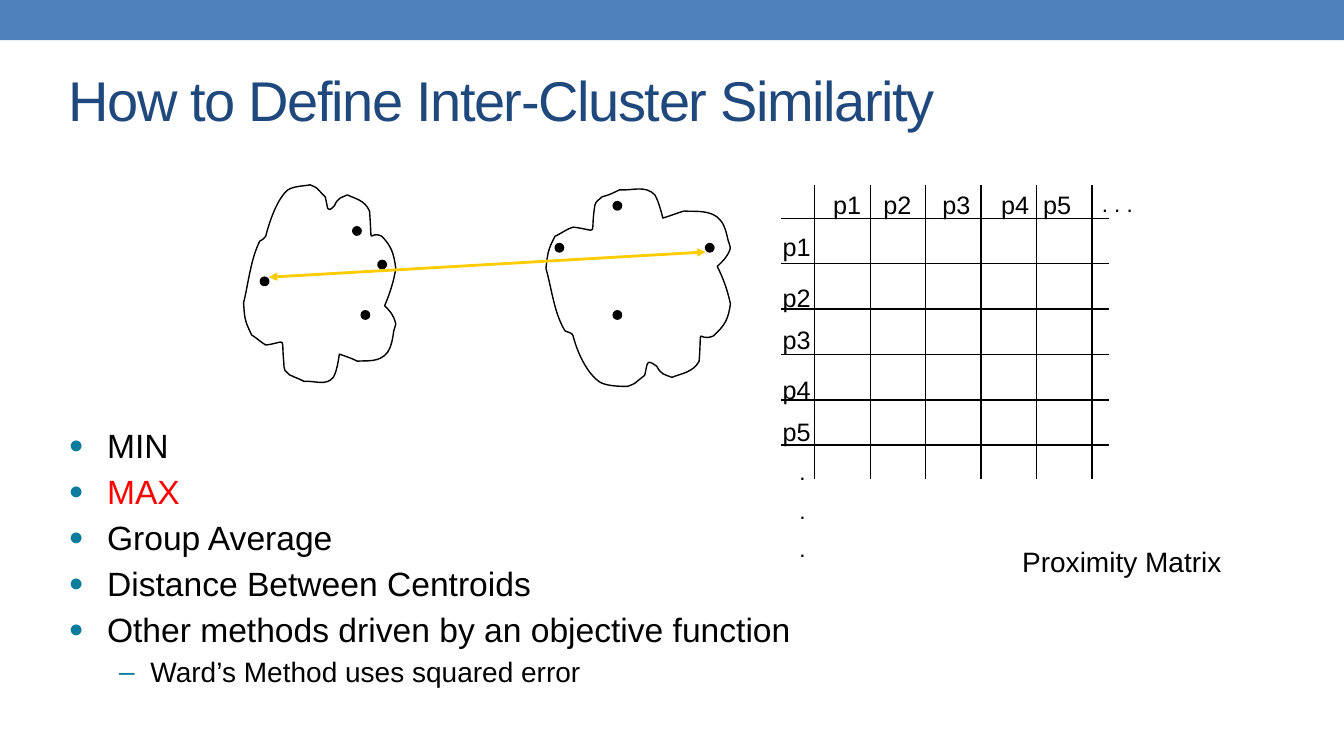
from lxml.etree import SubElement
from pptx import Presentation
from pptx.dml.color import RGBColor
from pptx.enum.shapes import MSO_CONNECTOR as Connector, MSO_SHAPE as Shape
from pptx.enum.text import MSO_ANCHOR as Anchor
from pptx.oxml.ns import qn
from pptx.util import Inches, Pt

# The slide is a grid of 160 x 90 units, twelve to the inch.
UNIT = Inches(1) // 12
HUNDREDTH = Inches(0.01)
COLUMNS, ROWS = 160, 90
FONT = "Arial"
COLORS = {"bar": "4F81BD", "title": "1F497D", "ink": "000000",
          "accent": "FF0000", "arrow": "FFCC00", "bullet": "0C7B9C"}

# Outlines in hundredths of an inch: each row is two handles and an end point.
# The end of the last row is also the start.
LEFT_OUTLINE = [
    (7, 74, 5, 97, 0, 117), (1, 135, 2, 136, 8, 149), (13, 152, 17, 156, 22, 159),
    (44, 156, 37, 149, 40, 177), (40, 179, 40, 182, 41, 184), (48, 191, 43, 187, 51, 191),
    (54, 192, 60, 195, 60, 195), (70, 194, 82, 200, 89, 191), (93, 185, 95, 168, 95, 168),
    (101, 170, 107, 172, 113, 175), (121, 174, 135, 177, 143, 166),
    (147, 160, 148, 152, 149, 145), (150, 142, 151, 138, 151, 138),
    (149, 129, 145, 125, 140, 120), (145, 108, 149, 96, 151, 83),
    (149, 67, 146, 60, 137, 51), (123, 44, 128, 66, 125, 26), (120, 15, 111, 14, 103, 10),
    (97, 13, 94, 12, 90, 21), (82, 29, 84, 23, 81, 12), (70, 1, 75, 4, 66, 0),
    (63, 1, 50, 1, 44, 5), (34, 13, 26, 35, 22, 51), (21, 54, 18, 54, 16, 56)]
RIGHT_OUTLINE = [
    (8, 127, 6, 104, 0, 83), (2, 66, 2, 65, 9, 51), (16, 48, 20, 44, 27, 42),
    (53, 45, 44, 52, 48, 24), (48, 21, 49, 19, 50, 17), (58, 10, 53, 13, 62, 10),
    (65, 9, 73, 5, 73, 5), (85, 6, 99, 0, 108, 10), (112, 16, 116, 33, 116, 33),
    (123, 31, 130, 28, 137, 26), (147, 27, 164, 24, 173, 35), (178, 41, 179, 48, 181, 56),
    (182, 58, 183, 63, 183, 63), (180, 72, 176, 75, 170, 81),
    (176, 93, 180, 104, 183, 118), (181, 134, 177, 140, 166, 150),
    (149, 157, 155, 135, 152, 175), (146, 186, 135, 187, 125, 191),
    (117, 188, 114, 188, 110, 180), (99, 172, 101, 177, 98, 189),
    (85, 199, 91, 196, 81, 200), (76, 200, 61, 200, 54, 196),
    (41, 188, 31, 166, 27, 150), (26, 146, 22, 147, 19, 145)]


def units(*values):
    return [round(value * UNIT) for value in values]


def color(name):
    return RGBColor.from_string(COLORS[name])


def add_text(page, box, lines, size, ink="ink"):
    frame = page.shapes.add_textbox(*units(*box)).text_frame
    frame.word_wrap = True
    frame.text = "\n".join(lines)
    for para in frame.paragraphs:
        font = para.runs[0].font
        font.name, font.size, font.color.rgb = FONT, Pt(size), color(ink)
    return frame


def add_line(page, start, end, ink="ink", width=1):
    line = page.shapes.add_connector(Connector.STRAIGHT, *units(*start, *end))
    line.line.color.rgb, line.line.width = color(ink), Pt(width)
    SubElement(line._element.spPr, qn("a:effectLst"))
    return line


def add_solid(page, kind, box, fill):
    shape = page.shapes.add_shape(kind, *units(*box))
    shape.shadow.inherit = False
    shape.fill.solid()
    shape.fill.fore_color.rgb = color(fill)
    shape.line.color.rgb, shape.line.width = color(fill), Pt(1)
    return shape


def add_header(page, box):
    left, top, width, height = box
    bar = add_solid(page, Shape.RECTANGLE, (left, top, width, 4.8), "bar")
    bar.line.fill.background()
    frame = add_text(page, (left + 7, top + 3, width * 0.68, height - 3),
                     ["How to Define Inter-Cluster Similarity"], 40, "title")
    frame.vertical_anchor = Anchor.MIDDLE
    frame.paragraphs[0].runs[0].font._element.set("spc", "-100")


def add_outline(page, origin, outline):
    """Draw straight segments between the end points, then bend them into curves."""
    left, top = units(*origin)
    curves = [[(left + x * HUNDREDTH, top + y * HUNDREDTH)
               for x, y in zip(row[::2], row[1::2])] for row in outline]
    ends = [curve[-1] for curve in curves]
    builder = page.shapes.build_freeform(*ends[-1])
    builder.add_line_segments(ends, close=True)
    blob = builder.convert_to_shape()
    for segment, curve in zip(list(blob._element.iter(qn("a:lnTo"))), curves):
        segment.tag = qn("a:cubicBezTo")
        segment.remove(segment[0])
        for x, y in curve:
            SubElement(segment, qn("a:pt"), x=str(x - blob.left), y=str(y - blob.top))
    blob.shadow.inherit = False
    blob.fill.background()
    blob.line.color.rgb, blob.line.width = color("ink"), Pt(1)


def add_cluster(page, origin, outline, dots):
    add_outline(page, origin, outline)
    for column, row in dots:
        add_solid(page, Shape.OVAL, (origin[0] + column, origin[1] + row, 1, 1), "ink")


def add_clusters(page, box):
    left, top, width, height = box
    add_cluster(page, (left, top), LEFT_OUTLINE, [(14, 15), (13, 5), (2, 11), (16, 9)])
    add_cluster(page, (left + 36, top), RIGHT_OUTLINE, [(19, 7), (1.1, 7), (8, 15), (8, 2)])
    arrow = add_line(page, (left + 3, top + 11), (left + 55, top + 8), "arrow", 2)
    outline = arrow.line._get_or_add_ln()
    for end in ("a:headEnd", "a:tailEnd"):
        SubElement(outline, qn(end), type="triangle")


def add_matrix(page, box):
    left, top, width, height = box
    for index in range(6):
        x, y = left + 4 + 6.6 * index, top + 4 + 5.4 * index
        add_line(page, (x, top), (x, top + height))
        add_line(page, (left, y), (left + width, y))
    label_places = zip((5, 11, 18, 25, 30), (5, 11, 16, 22, 27))
    for number, (column, row) in enumerate(label_places, 1):
        for x, y in ((left + column, top), (left - 1, top + row)):
            add_text(page, (x, y, 7, 4.8), [f"p{number}"], 18)
    add_text(page, (left + 37, top, 7, 4.4), [". . ."], 16)
    dots = add_text(page, (left + 1, top + 32, 7, 14), ["."] * 3, 16)
    for para in dots.paragraphs[1:]:
        para.space_before = Pt(8)
    add_text(page, (left + 27.5, top + 42.2, 33, 5.2), ["Proximity Matrix"], 20)


def set_bullet(para, symbol, margin, indent, percent):
    props = para._p.get_or_add_pPr()
    props.set("marL", str(Inches(margin)))
    props.set("indent", str(-Inches(indent)))
    SubElement(SubElement(props, qn("a:buClr")), qn("a:srgbClr"), val=COLORS["bullet"])
    SubElement(props, qn("a:buSzPct"), val=str(percent * 1000))
    SubElement(props, qn("a:buFont"), typeface=FONT)
    SubElement(props, qn("a:buChar"), char=symbol)


def add_methods(page, box):
    frame = add_text(page, box, [
        "MIN", "MAX", "Group Average", "Distance Between Centroids",
        "Other methods driven by an objective function",
        "Ward’s Method uses squared error"], 24)
    *methods, detail = frame.paragraphs
    for para in frame.paragraphs:
        para.space_before = para.space_after = Pt(2)
    for para in methods:
        set_bullet(para, "●", 0.38, 0.38, 75)
    methods[1].runs[0].font.color.rgb = color("accent")
    detail.level = 1
    detail.runs[0].font.size = Pt(20)
    set_bullet(detail, "–", 0.81, 0.31, 100)


def main():
    deck = Presentation()
    deck.slide_width, deck.slide_height = units(COLUMNS, ROWS)
    page = deck.slides.add_slide(deck.slide_layouts[6])
    add_header(page, (0, 0, COLUMNS, 20.5))
    add_matrix(page, (93, 22, 39, 35))
    add_clusters(page, (29, 22, 58, 24))
    add_methods(page, (7, 50, 94, 41))
    deck.save("out.pptx")


if __name__ == "__main__":
    main()
